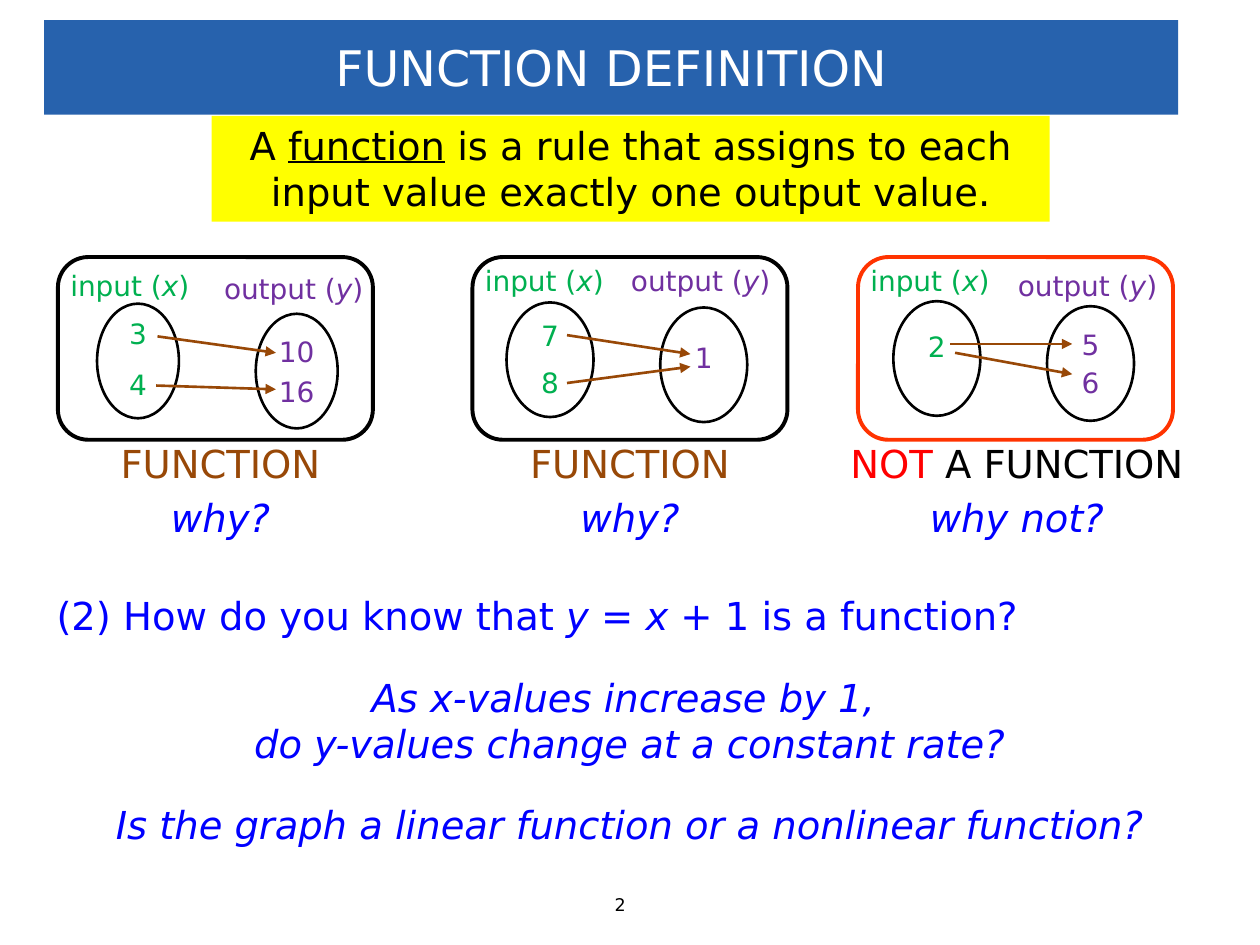
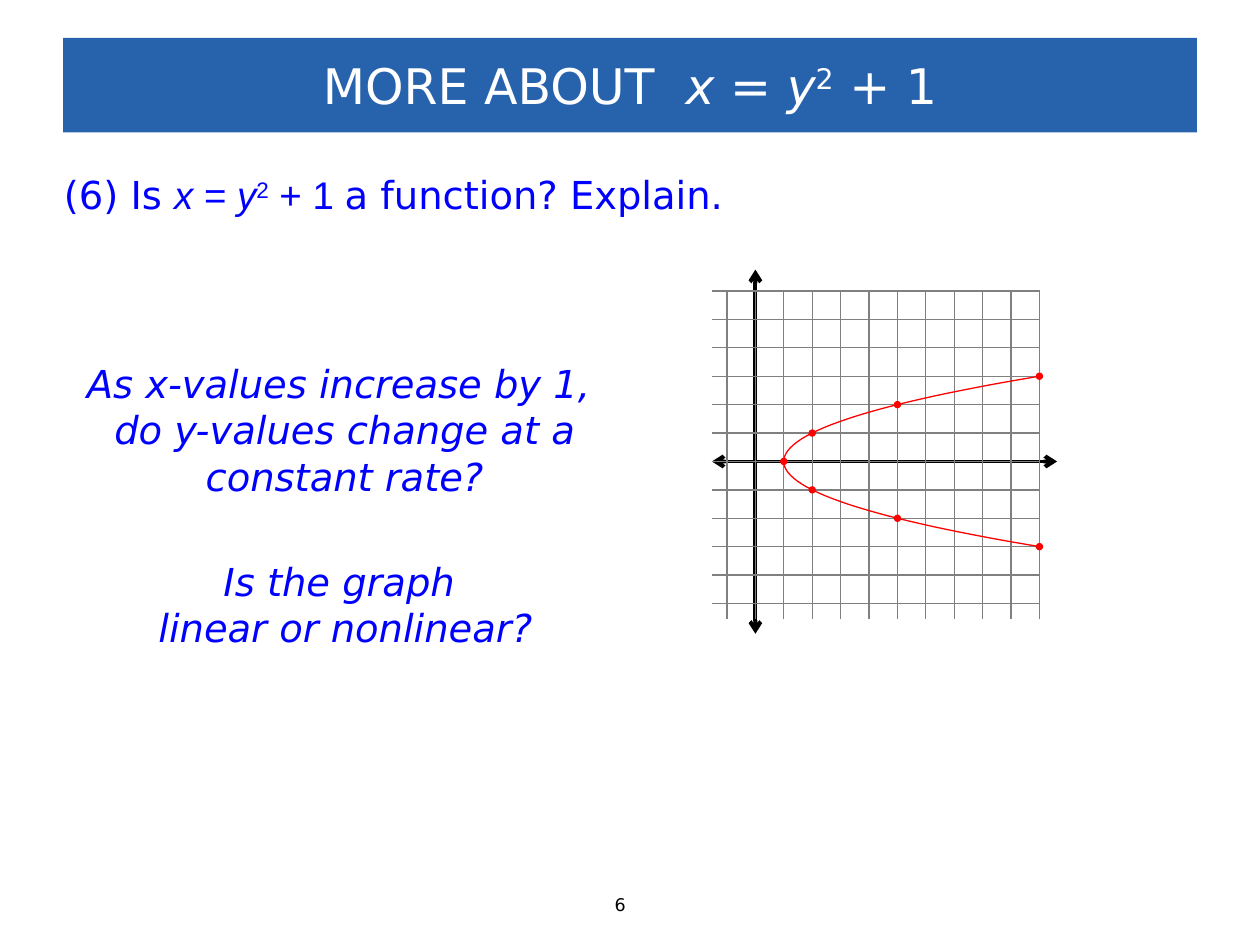
from dataclasses import dataclass
from lxml.etree import SubElement
from pptx import Presentation
from pptx.dml.color import RGBColor
from pptx.enum.shapes import MSO_CONNECTOR, MSO_SHAPE
from pptx.enum.text import MSO_ANCHOR, MSO_AUTO_SIZE, PP_ALIGN
from pptx.oxml.ns import qn
from pptx.util import Inches, Pt


@dataclass(frozen=True)
class Theme:
    font: str = "DejaVu Sans"
    math_font: str = "Arial"
    band: str = "2762AD"
    white: str = "FFFFFF"
    black: str = "000000"
    highlight: str = "FFFF00"
    question: str = "0000FF"
    input: str = "00B050"
    output: str = "7030A0"
    arrow: str = "984807"
    wrong: str = "FF0000"
    wrong_frame: str = "FF3300"
    grid: str = "808080"
    title_size: int = 28
    body_size: int = 22
    label_size: int = 16
    number_size: int = 10


THEME = Theme()
ITALIC = {"italic": True}
SUPER = {"superscript": True}
MATH = {"font": THEME.math_font}
WRONG = {"color": THEME.wrong}

DEFINITION = {
    "title": ["FUNCTION DEFINITION"],
    "title_at": (0.35, 0.16),
    "number": "2",
    "rule": ["A ", ("function", {"underline": True}),
             " is a rule that assigns to each input value exactly one output value."],
    "question": ["(2) How do you know that ", ("y", ITALIC), " = ", ("x", ITALIC),
                 " + 1 is a function?"],
    "question_box": (0.35, 4.65, 8.19, 0.47),
    "prompts": [
        ((1.87, 5.3, 6.25, 0.84), ["As x-values increase by 1, ",
                                   "do y-values change at a constant rate?"]),
        ((0.67, 6.31, 8.65, 0.47), ["Is the graph a linear function or a nonlinear function?"]),
    ],
}

MAPPINGS = [
    {
        "left": 0.46, "frame": THEME.black, "oval_width": 0.65,
        "input_label_top": 2.08, "output_label_at": (1.68, 2.11),
        "input_oval": (0.77, 2.41), "output_oval": (2.03, 2.49),
        "inputs": [("3", 2.46), ("4", 2.87)], "outputs": [("10", 2.61), ("16", 2.92)],
        "arrows": [(1.25, 2.67, 2.19, 2.8), (1.24, 3.06, 2.19, 3.09)],
        "center": 1.75, "verdict": [("FUNCTION", {"color": THEME.arrow})], "why": "why?",
    },
    {
        "left": 3.75, "frame": THEME.black, "oval_width": 0.69,
        "input_label_top": 2.04, "output_label_at": (4.91, 2.04),
        "input_oval": (4.02, 2.4), "output_oval": (5.24, 2.44),
        "inputs": [("7", 2.48), ("8", 2.85)], "outputs": [("1", 2.65)],
        "arrows": [(4.5, 2.66, 5.48, 2.81), (4.5, 3.04, 5.48, 2.91)],
        "center": 5, "verdict": [("FUNCTION", {"color": THEME.arrow})], "why": "why?",
    },
    {
        "left": 6.81, "frame": THEME.wrong_frame, "oval_width": 0.69,
        "input_label_top": 2.04, "output_label_at": (7.98, 2.08),
        "input_oval": (7.09, 2.39), "output_oval": (8.31, 2.43),
        "inputs": [("2", 2.57)], "outputs": [("5", 2.55), ("6", 2.85)],
        "arrows": [(7.54, 2.73, 8.51, 2.73), (7.58, 2.8, 8.51, 2.97)],
        "center": 8.07, "verdict": [("NOT ", WRONG), "A FUNCTION"], "why": "why not?",
    },
]

PARABOLA = {
    "title": ["MORE ABOUT  ", ("x", ITALIC), " = ", ("y", ITALIC), ("2", SUPER), " + 1"],
    "title_at": (0.5, 0.3),
    "number": "6",
    "question": ["(6) Is ", ("x", MATH | ITALIC), (" = ", MATH), ("y", MATH | ITALIC),
                 ("2", MATH | SUPER), (" + 1 ", MATH), "a function? Explain."],
    "question_box": (0.41, 1.31, 5.63, 0.47),
    "prompts": [
        ((0.58, 2.81, 4.31, 1.21), ["As x-values increase by 1, ",
                                    "do y-values change at a constant rate?"]),
        ((1.13, 4.38, 3.22, 0.84), ["Is the graph ", "linear or nonlinear?"]),
    ],
}

GRID = {"left": 5.65, "right": 8.25, "top": 2.31, "bottom": 4.91,
        "first_column": 5.77, "lines": 12, "columns_right_of_y": 10, "rows_above_x": 6}
X_AXIS = (8.39, 5.65)
Y_AXIS = (5.03, 2.14)
MARKED_Y = range(-3, 4)
CURVE_STEPS = 60
DOT = 0.03


def rgb(color):
    return RGBColor.from_string(color)


def write(frame, paragraphs, size, color, align=PP_ALIGN.LEFT, italic=False):
    for index, runs in enumerate(paragraphs):
        paragraph = frame.paragraphs[0] if index == 0 else frame.add_paragraph()
        paragraph.alignment = align
        for part in runs:
            text, style = part if isinstance(part, tuple) else (part, {})
            run = paragraph.add_run()
            run.text = text
            font = run.font
            font.name = style.get("font", THEME.font)
            font.size = Pt(size)
            font.color.rgb = rgb(style.get("color", color))
            font.italic = style.get("italic", italic)
            font.underline = style.get("underline", False)
            if "superscript" in style:
                font._element.set("baseline", "30000")


def add_text(shapes, box, paragraphs, size, color, align=PP_ALIGN.CENTER, italic=False, wrap=True):
    textbox = shapes.add_textbox(*map(Inches, box))
    textbox.text_frame.word_wrap = wrap
    write(textbox.text_frame, paragraphs, size, color, align, italic)
    return textbox


def add_outline(shapes, kind, box, color, weight, fill=None):
    outline = shapes.add_shape(kind, *map(Inches, box))
    outline.shadow.inherit = False
    if fill:
        outline.fill.solid()
        outline.fill.fore_color.rgb = rgb(fill)
    else:
        outline.fill.background()
    outline.line.color.rgb = rgb(color)
    outline.line.width = Pt(weight)


def add_line(shapes, ends, color, weight, head=None, tail=None):
    line = shapes.add_connector(MSO_CONNECTOR.STRAIGHT, *map(Inches, ends))
    line.line.color.rgb = rgb(color)
    line.line.width = Pt(weight)
    for tag, arrow in (("a:headEnd", head), ("a:tailEnd", tail)):
        if arrow:
            SubElement(line.line._get_or_add_ln(), qn(tag), type=arrow)
    SubElement(line._element.spPr, qn("a:effectLst"))


def add_base_slide(prs, content):
    slide = prs.slides.add_slide(prs.slide_layouts[5])
    title = slide.shapes.title
    left, top = content["title_at"]
    title.left, title.top, title.width, title.height = map(Inches, (left, top, 9, 0.75))
    title.fill.solid()
    title.fill.fore_color.rgb = rgb(THEME.band)
    title.text_frame.auto_size = MSO_AUTO_SIZE.NONE
    title.text_frame.vertical_anchor = MSO_ANCHOR.MIDDLE
    write(title.text_frame, [content["title"]], THEME.title_size, THEME.white, PP_ALIGN.CENTER)

    add_text(slide.shapes, (4.78, 7.05, 0.44, 0.27), [[content["number"]]],
             THEME.number_size, THEME.black, PP_ALIGN.LEFT, wrap=False)
    question = add_text(slide.shapes, content["question_box"], [content["question"]],
                        THEME.body_size, THEME.question, PP_ALIGN.LEFT)
    properties = question.text_frame.paragraphs[0]._p.get_or_add_pPr()
    properties.set("marL", str(Inches(0.57)))
    properties.set("indent", str(Inches(-0.57)))
    for box, lines in content["prompts"]:
        add_text(slide.shapes, box, [[line] for line in lines],
                 THEME.body_size, THEME.question, italic=True)
    return slide


def add_mapping(slide, mapping):
    group = slide.shapes.add_group_shape().shapes
    left, oval_width = mapping["left"], mapping["oval_width"]
    add_outline(group, MSO_SHAPE.ROUNDED_RECTANGLE, (left, 2.04, 2.5, 1.45), mapping["frame"], 2.25)
    sides = [
        ("input", "x", (left, mapping["input_label_top"]), THEME.input),
        ("output", "y", mapping["output_label_at"], THEME.output),
    ]
    for side, variable, label_at, color in sides:
        add_text(group, (*label_at, 1.36, 0.37), [[f"{side} (", (variable, ITALIC), ")"]],
                 THEME.label_size, color, PP_ALIGN.LEFT)
        oval_at = mapping[f"{side}_oval"]
        add_outline(group, MSO_SHAPE.OVAL, (*oval_at, oval_width, 0.91), THEME.black, 1.5)
        value_left = oval_at[0] + oval_width / 2 - 0.25
        for value, top in mapping[f"{side}s"]:
            add_text(group, (value_left, top, 0.5, 0.37), [[value]], THEME.label_size, color)
    for ends in mapping["arrows"]:
        add_line(group, ends, THEME.arrow, 1.5, tail="triangle")

    caption_left = mapping["center"] - 1.47
    add_text(slide.shapes, (caption_left, 3.44, 2.94, 0.47), [mapping["verdict"]],
             THEME.body_size, THEME.black)
    add_text(slide.shapes, (caption_left, 3.87, 2.94, 0.47), [[mapping["why"]]],
             THEME.body_size, THEME.question, italic=True)


def add_graph(slide):
    group = slide.shapes.add_group_shape().shapes
    left, right, top, bottom = (GRID[side] for side in ("left", "right", "top", "bottom"))
    cell = (right - GRID["first_column"]) / (GRID["lines"] - 1)
    origin_x = right - GRID["columns_right_of_y"] * cell
    origin_y = top + GRID["rows_above_x"] * cell

    def curve_point(y):
        return origin_x + (y * y + 1) * cell, origin_y - y * cell

    for ends in ((X_AXIS[0], origin_y, X_AXIS[1], origin_y),
                 (origin_x, Y_AXIS[0], origin_x, Y_AXIS[1])):
        add_line(group, ends, THEME.black, 2.25, head="arrow", tail="arrow")
    for index in range(GRID["lines"]):
        column, row = right - index * cell, top + index * cell
        add_line(group, (column, top, column, bottom), THEME.grid, 0.75)
        add_line(group, (left, row, right, row), THEME.grid, 0.75)

    points = [tuple(map(Inches, curve_point(-3 + 6 * step / CURVE_STEPS)))
              for step in range(CURVE_STEPS + 1)]
    builder = group.build_freeform(*points[0])
    builder.add_line_segments(points[1:], close=False)
    curve = builder.convert_to_shape()
    curve.shadow.inherit = False
    curve.fill.background()
    curve.line.color.rgb = rgb(THEME.wrong)
    curve.line.width = Pt(0.75)
    for y in MARKED_Y:
        dot_x, dot_y = curve_point(y)
        add_outline(group, MSO_SHAPE.OVAL, (dot_x - DOT / 2, dot_y - DOT / 2, DOT, DOT),
                    THEME.wrong, 2, fill=THEME.wrong)


def main():
    prs = Presentation()
    prs.slide_width, prs.slide_height = Inches(10), Inches(7.5)

    definition = add_base_slide(prs, DEFINITION)
    rule = add_text(definition.shapes, (1.68, 0.92, 6.65, 0.84), [DEFINITION["rule"]],
                    THEME.body_size, THEME.black)
    rule.fill.solid()
    rule.fill.fore_color.rgb = rgb(THEME.highlight)
    for mapping in MAPPINGS:
        add_mapping(definition, mapping)

    add_graph(add_base_slide(prs, PARABOLA))
    prs.save("out.pptx")


if __name__ == "__main__":
    main()
